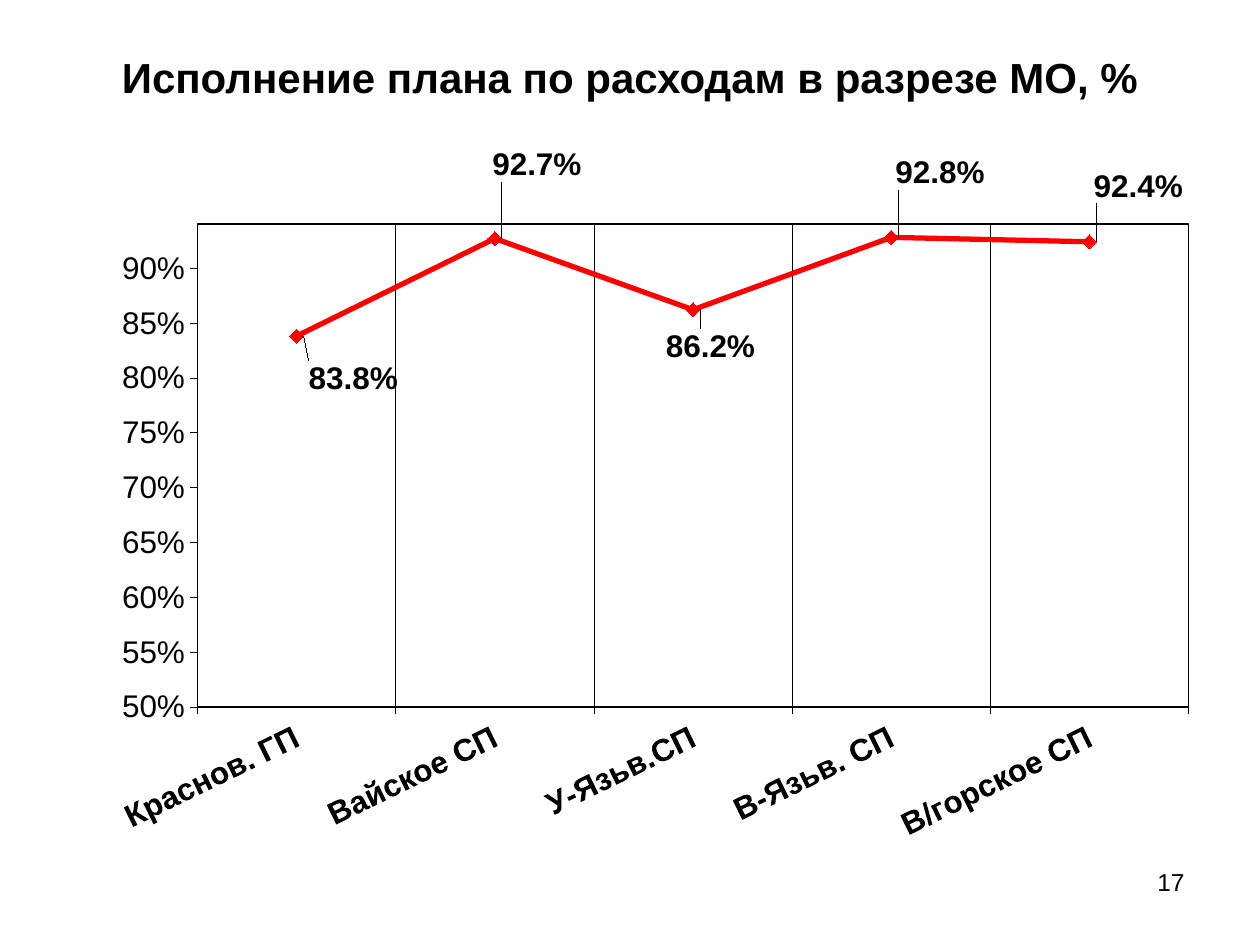
"""Build a slide with a line chart of budget spending by municipality."""
from dataclasses import dataclass

from lxml.etree import SubElement as Sub
from pptx import Presentation
from pptx.chart.data import CategoryChartData as Data
from pptx.dml.color import RGBColor as Rgb
from pptx.enum.chart import XL_CHART_TYPE as Kind
from pptx.enum.chart import XL_LABEL_POSITION as Spot
from pptx.enum.chart import XL_MARKER_STYLE as Mark
from pptx.enum.chart import XL_TICK_MARK as Tick
from pptx.enum.text import MSO_ANCHOR as Anchor
from pptx.enum.text import PP_ALIGN as Align
from pptx.oxml import parse_xml
from pptx.oxml.ns import nsdecls, qn
from pptx.util import Pt

SCALE = 914400 / 126


def px(num):
    """Turn px into EMU."""
    return round(num * SCALE)


def put(obj, **form):
    """Set each format value on an object."""
    for key, val in form.items():
        setattr(obj, key, val)


@dataclass(frozen=True)
class Theme:
    """Hold colours, font and type sizes."""
    ink: Rgb = Rgb(0, 0, 0)
    red: Rgb = Rgb(255, 0, 0)
    face: str = "Arial"
    title: int = 24
    body: int = 18
    foot: int = 14


class Deck:
    """Hold the style and the current slide."""

    def __init__(self, theme):
        """Start a deck with one blank slide."""
        self.theme = theme
        self.file = Presentation()
        put(self.file, slide_width=px(1260), slide_height=px(945))
        self.slide = self.file.slides.add_slide(self.file.slide_layouts[6])

    def font(self, font, size, bold=False):
        """Style a font."""
        put(font, name=self.theme.face, size=Pt(size), bold=bold)
        font.color.rgb = self.theme.ink

    def line(self, line, color, width):
        """Style a line."""
        line.color.rgb = color
        line.width = Pt(width)

    def text(self, words, box, size, align, anchor=Anchor.TOP, bold=False):
        """Add a text box."""
        frame = self.slide.shapes.add_textbox(*map(px, box)).text_frame
        put(frame, word_wrap=True, vertical_anchor=anchor)
        para = frame.paragraphs[0]
        para.alignment = align
        run = para.add_run()
        run.text = words
        self.font(run.font, size, bold)

    def axis(self, axis, bold=False, **form):
        """Style an axis."""
        put(axis, major_tick_mark=Tick.OUTSIDE, minor_tick_mark=Tick.NONE, **form)
        self.font(axis.tick_labels.font, self.theme.body, bold)
        self.line(axis.format.line, self.theme.ink, 0.25)

    def place(self, host, spot, **part):
        """Give a chart part a manual layout in shares of the chart."""
        box = Sub(host, qn("c:layout"))
        node = Sub(box, qn("c:manualLayout"))
        for key, val in (part | spot).items():
            Sub(node, qn(f"c:{key}")).set("val", str(val))
        return box

    def label(self, row, size, shifts):
        """Show the values, each moved by its own px shift."""
        tags = row.data_labels
        put(tags, show_value=True, number_format="0.0%",
            number_format_is_linked=False, position=Spot.RIGHT)
        self.font(tags.font, self.theme.body, True)
        for num in range(len(shifts)):
            tag = row.points[num].data_label
            tag.position = Spot.RIGHT
            self.font(tag.font, self.theme.body, True)
        wide, high = size
        for node, (left, top) in zip(tags._element.findall(qn("c:dLbl")), shifts):
            spot = {"x": round(left / wide, 3), "y": round(top / high, 3)}
            node.insert(1, self.place(node, spot))

    def chart(self, rows, box, plot, shifts):
        """Add the line chart."""
        ink, red = self.theme.ink, self.theme.red
        data = Data(number_format="0.0%")
        data.categories = list(rows)
        data.add_series("Исполнение", list(rows.values()))
        chart = self.slide.shapes.add_chart(
            Kind.LINE_MARKERS, *map(px, box), data).chart
        put(chart, has_legend=False, has_title=False)
        self.font(chart.font, self.theme.body, True)

        cats, vals = chart.category_axis, chart.value_axis
        self.axis(cats, bold=True, has_major_gridlines=True)
        self.line(cats.major_gridlines.format.line, ink, 0.25)
        cats._element.find(qn("c:txPr")).find(qn("a:bodyPr")).set("rot", "-1560000")
        self.axis(vals, has_major_gridlines=False, minimum_scale=0.5,
                  maximum_scale=0.94, major_unit=0.05)
        put(vals.tick_labels, number_format="0%", number_format_is_linked=False)

        row = chart.plots[0].series[0]
        row.smooth = False
        self.line(row.format.line, red, 3)
        put(row.marker, style=Mark.DIAMOND, size=8)
        row.marker.format.fill.solid()
        row.marker.format.fill.fore_color.rgb = red
        self.line(row.marker.format.line, red, 0.75)
        self.label(row, box[2:], shifts)

        area = chart._chartSpace.chart.plotArea
        for old in area.findall(qn("c:layout")):
            area.remove(old)
        area.insert(0, self.place(area, plot, layoutTarget="inner",
                                  xMode="edge", yMode="edge"))
        area.append(parse_xml(
            f'<c:spPr {nsdecls("c", "a")}><a:noFill/><a:ln w="12700">'
            f'<a:solidFill><a:srgbClr val="{ink}"/></a:solidFill></a:ln></c:spPr>'))


def main():
    """Build and save the slide."""
    theme = Theme()
    deck = Deck(theme)
    deck.text("17", (903, 861, 294, 66), theme.foot, Align.RIGHT)
    deck.text("Исполнение плана по расходам в разрезе МО, %", (63, 38, 1134, 78),
              theme.title, Align.CENTER, Anchor.MIDDLE, True)
    rows = {"Краснов. ГП": 0.838, "Вайское СП": 0.927, "У-Язьв.СП": 0.862,
            "В-Язьв. СП": 0.928, "В/горское СП": 0.924}
    shifts = [(0, 42), (-15, -74), (-39, 37), (-8, -65), (-8, -56)]
    plot = {"x": 0.104, "y": 0.1, "w": 0.885, "h": 0.64}
    deck.chart(rows, (81, 147, 1120, 756), plot, shifts)
    deck.file.save("out.pptx")


if __name__ == "__main__":
    main()
